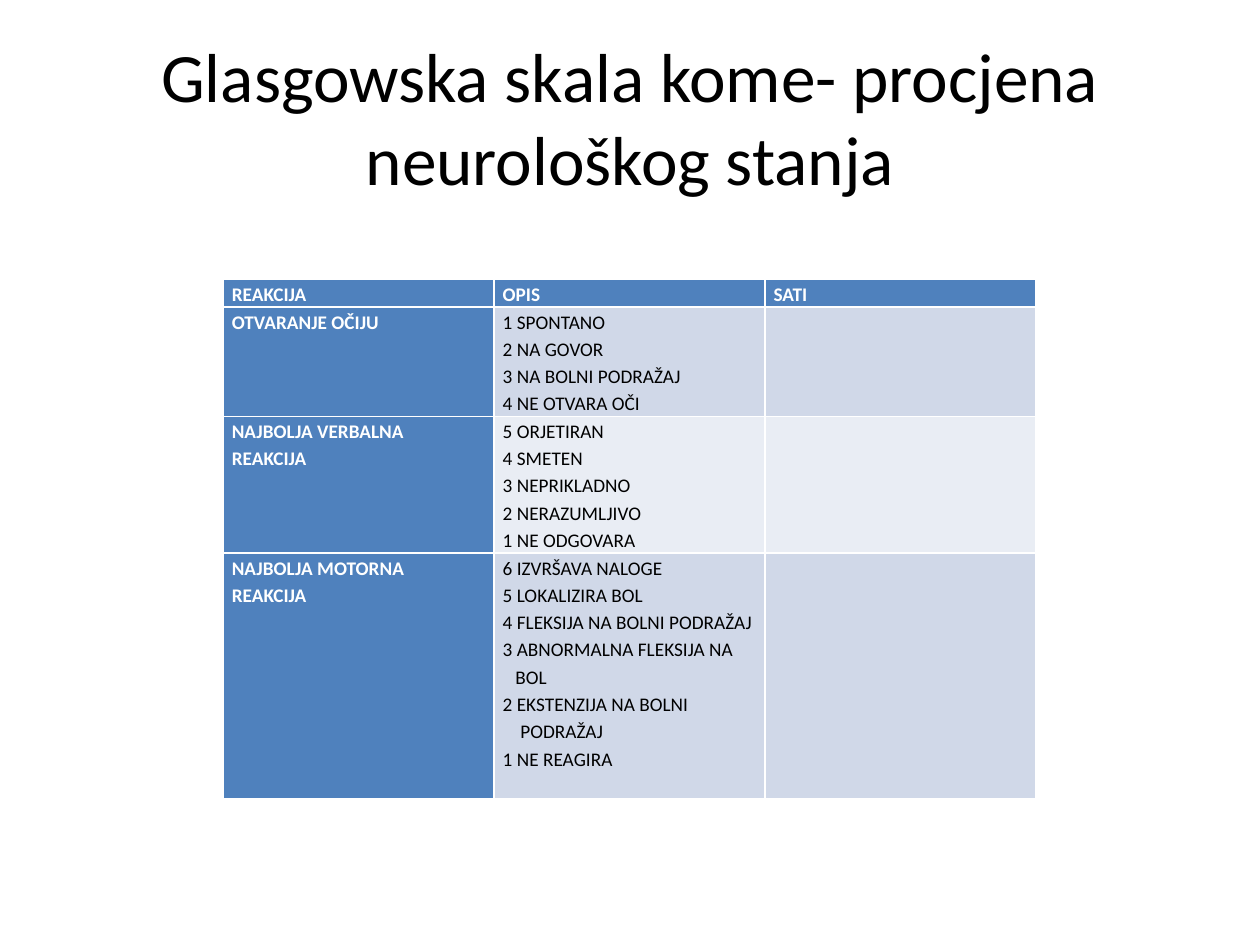
from pptx import Presentation
from pptx.dml.color import RGBColor as RGB
from pptx.enum.text import MSO_ANCHOR as Anchor, MSO_AUTO_SIZE as Fit, PP_ALIGN as Align
from pptx.util import Inches, Pt

HUES = {"head": "4F81BD", "dark": "D0D8E8", "light": "E9EDF4",
        "white": "FFFFFF", "black": "000000"}
LINE = 0.217  # height of one text line, in inches
COL = 2.15
ROWS = [
    (1, ["REAKCIJA"], ["OPIS"], ["SATI"]),
    (4, ["OTVARANJE OČIJU"],
     ["1 SPONTANO", "2 NA GOVOR", "3 NA BOLNI PODRAŽAJ", "4 NE OTVARA OČI"], []),
    (5, ["NAJBOLJA VERBALNA", "REAKCIJA"],
     ["5 ORJETIRAN", "4 SMETEN", "3 NEPRIKLADNO", "2 NERAZUMLJIVO",
      "1 NE ODGOVARA"], []),
    (9, ["NAJBOLJA MOTORNA", "REAKCIJA"],
     ["6 IZVRŠAVA NALOGE", "5 LOKALIZIRA BOL", "4 FLEKSIJA NA BOLNI PODRAŽAJ",
      "3 ABNORMALNA FLEKSIJA NA", "BOL", "2 EKSTENZIJA NA BOLNI", "PODRAŽAJ",
      "1 NE REAGIRA"], []),
]
INDENT = {"BOL": 0.1, "PODRAŽAJ": 0.14}  # second halves of wrapped entries


def hue(name):
    return RGB.from_string(HUES[name])


deck = Presentation()
deck.slide_width, deck.slide_height = Inches(10), Inches(7.5)
slide = deck.slides.add_slide(deck.slide_layouts[5])

title = slide.shapes.title
title.left, title.top = Inches(0.5), Inches(0.3)
title.width, title.height = Inches(9), Inches(1.25)
frame = title.text_frame
frame.text = "Glasgowska skala kome- procjena neurološkog stanja"
frame.word_wrap, frame.auto_size = True, Fit.NONE
frame.vertical_anchor = Anchor.MIDDLE
para = frame.paragraphs[0]
para.alignment = Align.CENTER
para.font.size, para.font.name = Pt(39.6), "Calibri"
para.font.color.rgb = hue("black")

total = sum(row[0] for row in ROWS)
table = slide.shapes.add_table(len(ROWS), 3, Inches(1.77), Inches(2.22),
                               Inches(3 * COL), Inches(total * LINE)).table
table.first_col = True
for col in table.columns:
    col.width = Inches(COL)

for r, (count, *texts) in enumerate(ROWS):
    table.rows[r].height = Inches(count * LINE)
    for c, lines in enumerate(texts):
        cell = table.cell(r, c)
        head = r == 0 or c == 0
        cell.fill.solid()
        cell.fill.fore_color.rgb = hue("head" if head else "dark" if r % 2 else "light")
        cell.margin_left = cell.margin_right = Inches(0.07)
        cell.margin_top = cell.margin_bottom = 0
        cell.text = "\n".join(lines)
        for para in cell.text_frame.paragraphs:
            para.line_spacing = 1.15
            font = para.font
            font.size, font.name, font.bold = Pt(11), "Calibri", head
            font.color.rgb = hue("white" if head else "black")
            if para.text in INDENT:
                para._p.get_or_add_pPr().set("marL", str(Inches(INDENT[para.text])))

deck.save("out.pptx")
